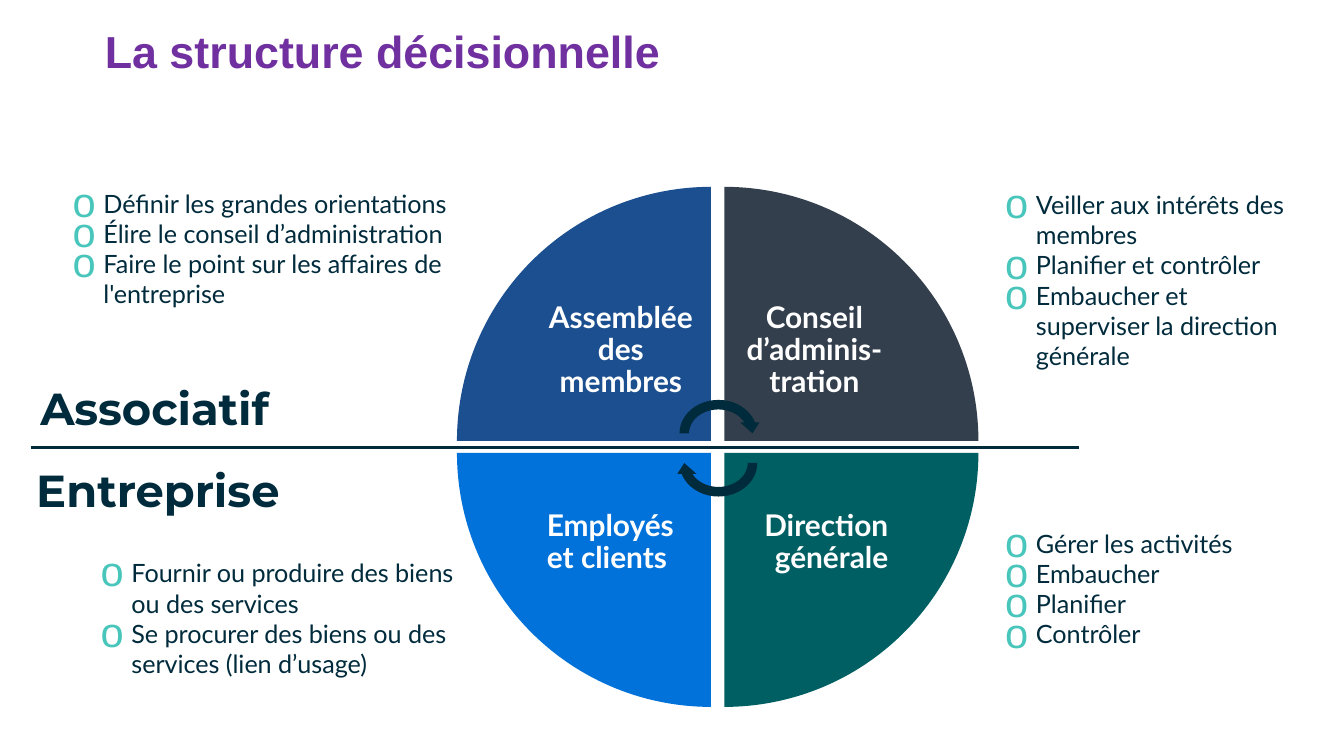
from lxml.etree import SubElement
from pptx import Presentation
from pptx.dml.color import RGBColor
from pptx.enum.shapes import MSO_CONNECTOR as Connector, MSO_SHAPE as Shape
from pptx.enum.text import MSO_ANCHOR as Anchor, MSO_AUTO_SIZE as AutoSize, PP_ALIGN as Align
from pptx.oxml.ns import qn
from pptx.util import Inches, Pt

NAVY = RGBColor(0x00, 0x2B, 0x3C)
BLUE = RGBColor(0x1C, 0x4F, 0x90)
SLATE = RGBColor(0x33, 0x3F, 0x4C)
GREEN = RGBColor(0x00, 0x5F, 0x63)
AZURE = RGBColor(0x00, 0x72, 0xDA)
TURQUOISE = RGBColor(0x49, 0xC6, 0xBB)
PURPLE = RGBColor(0x70, 0x30, 0xA0)
WHITE = RGBColor(0xFF, 0xFF, 0xFF)

WEDGE_SIZE = 1.89
LABEL_SIZE = 1.34
LEFT, RIGHT = 3.4, 5.39
TOP, BOTTOM = 1.39, 3.37
LABEL_OFFSET = WEDGE_SIZE - LABEL_SIZE


class SlideBuilder:
    body_font = "Lato"
    heading_font = "Montserrat"
    title_font = "Arial"

    def __init__(self, slide):
        self.slide = slide

    def format_frame(self, frame, insets, anchor=Anchor.TOP):
        frame.word_wrap = True
        frame.auto_size = AutoSize.NONE
        frame.vertical_anchor = anchor
        frame.margin_left = frame.margin_right = Inches(insets[0])
        frame.margin_top = frame.margin_bottom = Inches(insets[1])

    def format_runs(self, paragraph, font, size, color, bold=True):
        for run in paragraph.runs:
            run.font.name = font
            run.font.size = Pt(size)
            run.font.bold = bold
            run.font.color.rgb = color

    def title(self, text, left, top, width, height):
        shape = self.slide.shapes.title
        shape.left, shape.top = Inches(left), Inches(top)
        shape.width, shape.height = Inches(width), Inches(height)
        shape.text_frame.text = text
        self.format_frame(shape.text_frame, (0.07, 0.05), Anchor.MIDDLE)
        paragraph = shape.text_frame.paragraphs[0]
        paragraph.alignment = Align.LEFT
        paragraph.line_spacing = 0.9
        self.format_runs(paragraph, self.title_font, 24, PURPLE)

    def text_box(self, left, top, width, height):
        return self.slide.shapes.add_textbox(
            Inches(left), Inches(top), Inches(width), Inches(height)).text_frame

    def heading(self, text, left, top):
        frame = self.text_box(left, top, 1.97, 0.5)
        self.format_frame(frame, (0.07, 0.05), Anchor.MIDDLE)
        frame.text = text
        self.format_runs(frame.paragraphs[0], self.heading_font, 24, NAVY)

    def label(self, text, left, top, alignment):
        frame = self.text_box(left, top, LABEL_SIZE, LABEL_SIZE)
        self.format_frame(frame, (0.12, 0.12), Anchor.MIDDLE)
        frame.text = text
        paragraph = frame.paragraphs[0]
        paragraph.alignment = alignment
        paragraph.line_spacing = 0.9
        self.format_runs(paragraph, self.body_font, 16, WHITE)

    def filled_shape(self, kind, left, top, width, height, color, rotation=0):
        shape = self.slide.shapes.add_shape(
            kind, Inches(left), Inches(top), Inches(width), Inches(height))
        shape.rotation = rotation
        shape.shadow.inherit = False
        shape.fill.solid()
        shape.fill.fore_color.rgb = color
        shape.line.fill.background()

    def divider(self, left, right, y):
        line = self.slide.shapes.add_connector(
            Connector.STRAIGHT, Inches(left), Inches(y), Inches(right), Inches(y))
        line.line.color.rgb = NAVY
        line.line.width = Pt(1.5)
        SubElement(line._element.spPr, qn("a:effectLst"))

    def bullet(self, paragraph):
        properties = paragraph._p.get_or_add_pPr()
        properties.set("marL", str(Inches(0.23)))
        properties.set("indent", str(-Inches(0.23)))
        color = SubElement(properties, qn("a:buClr"))
        SubElement(color, qn("a:srgbClr"), val=str(TURQUOISE))
        SubElement(properties, qn("a:buSzPct"), val="165000")
        SubElement(properties, qn("a:buFont"), typeface=self.title_font)
        SubElement(properties, qn("a:buChar"), char="o")

    def bullet_list(self, items, left, top, width, height, insets=(0.1, 0.05)):
        frame = self.text_box(left, top, width, height)
        self.format_frame(frame, insets)
        frame.text = "\n".join(items)
        for paragraph in frame.paragraphs:
            self.bullet(paragraph)
            self.format_runs(paragraph, self.body_font, 13.5, NAVY, False)


def main():
    presentation = Presentation()
    presentation.slide_width = Inches(10)
    presentation.slide_height = Inches(10) * 9 // 16
    slide = presentation.slides.add_slide(presentation.slide_layouts[5])
    builder = SlideBuilder(slide)

    builder.title("La structure décisionnelle", 0.71, 0.17, 5.38, 0.46)

    quadrants = [
        ("Assemblée des membres", LEFT, TOP, BLUE, Align.CENTER),
        ("Conseil d’adminis-tration", RIGHT, TOP, SLATE, Align.CENTER),
        ("Direction générale", RIGHT, BOTTOM, GREEN, Align.RIGHT),
        ("Employés et clients", LEFT, BOTTOM, AZURE, Align.LEFT),
    ]
    for index, (text, left, top, color, alignment) in enumerate(quadrants):
        builder.filled_shape(Shape.PIE_WEDGE, left, top, WEDGE_SIZE, WEDGE_SIZE,
                             color, index * 90)
        label_left = left + LABEL_OFFSET if left == LEFT else left
        label_top = top + LABEL_OFFSET if top == TOP else top
        builder.label(text, label_left, label_top, alignment)

    for top, rotation in ((2.94, 0), (3.16, 180)):
        builder.filled_shape(Shape.CIRCULAR_ARROW, 5.02, top, 0.65, 0.57, NAVY, rotation)

    builder.divider(0.23, 8.03, 3.33)

    builder.bullet_list(
        ["Veiller aux intérêts des membres", "Planifier et contrôler",
         "Embaucher et superviser la direction générale"],
        7.38, 1.36, 2.32, 1.46)
    builder.bullet_list(
        ["Gérer les activités", "Embaucher", "Planifier", "Contrôler"],
        7.38, 3.88, 2.32, 1.01)
    builder.bullet_list(
        ["Définir les grandes orientations", "Élire le conseil d’administration",
         "Faire le point sur les affaires de l'entreprise"],
        0.47, 1.36, 3.66, 0.98, (0.07, 0.04))
    builder.bullet_list(
        ["Fournir ou produire des biens ou des services",
         "Se procurer des biens ou des services (lien d’usage)"],
        0.65, 4.1, 2.95, 1.01)

    builder.heading("Associatif", 0.23, 2.78)
    builder.heading("Entreprise", 0.2, 3.39)

    presentation.save("out.pptx")


if __name__ == "__main__":
    main()
